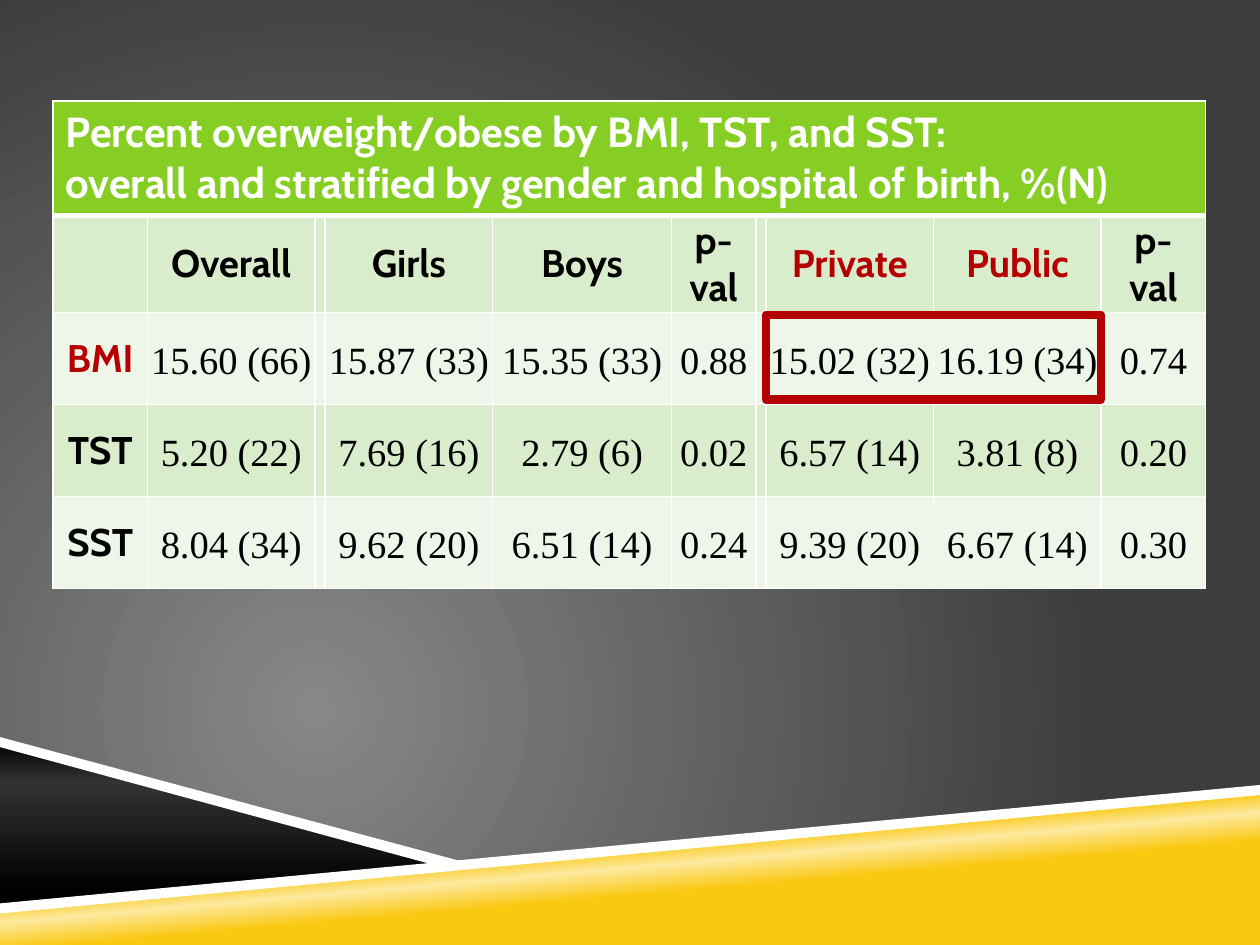
import dataclasses
import typing

import lxml.etree
import pptx
import pptx.dml.color
import pptx.enum.shapes
import pptx.enum.text
import pptx.oxml.ns
import pptx.util

SLIDE_WIDTH, SLIDE_HEIGHT = 10, 7.5
COLORS = {
    "glow": "878787", "charcoal": "3D3D3D", "gold": "FAC810",
    "cream": "FDE99F", "black": "000000", "graphite": "333333",
    "white": "FFFFFF", "green": "86CE24", "mint": "D9EDCD",
    "pale": "EDF6E8", "red": "B40000",
}
HEADING_FONT, VALUE_FONT = "Cabin", "Times New Roman"

TABLE_LEFT, TABLE_TOP = 0.42, 0.8
COLUMN_WIDTHS = [0.75, 1.33, 0.08, 1.33, 1.42, 0.67, 0.08, 1.33, 1.33, 0.83]
ROW_HEIGHTS = [0.84, 0.77, 0.73, 0.73, 0.73]
TITLE = (
    "Percent overweight/obese by BMI, TST, and SST:\n"
    "overall and stratified by gender and hospital of birth, %(N)"
)
RESULTS = [
    ["", "Overall", "", "Girls", "Boys", "p-\nval", "", "Private", "Public", "p-\nval"],
    ["BMI", "15.60 (66)", "", "15.87 (33)", "15.35 (33)", "0.88", "",
     "15.02 (32)", "16.19 (34)", "0.74"],
    ["TST", "5.20 (22)", "", "7.69 (16)", "2.79 (6)", "0.02", "",
     "6.57 (14)", "3.81 (8)", "0.20"],
    ["SST", "8.04 (34)", "", "9.62 (20)", "6.51 (14)", "0.24", "",
     "9.39 (20)", "6.67 (14)", "0.30"],
]
RED_HEADINGS = {"Private", "Public", "BMI"}


@dataclasses.dataclass(frozen=True)
class Band:
    points: list[tuple[float, float]]
    stops: list[tuple[int, str]]
    angle: int = 0


@dataclasses.dataclass(frozen=True)
class CellStyle:
    font: str
    size: int
    bold: bool
    color: str
    fill: str
    centered: bool = True
    line_spacing: typing.Optional[float] = None


BANDS = [
    Band([(0, 7.21), (10, 6.27), (10, 7.5), (0, 7.5)],
         [(39, "gold"), (50, "cream"), (58, "gold")], 265),
    Band([(0, 5.89), (3.59, 6.85), (0, 7.21)],
         [(0, "black"), (24, "graphite"), (90, "black")], 90),
    Band([(10, 6.23), (0, 7.17), (0, 7.25), (10, 6.31)], [(0, "white")]),
    Band([(0, 5.85), (0, 5.93), (3.5, 6.88), (3.75, 6.86)], [(0, "white")]),
]


def rgb(name: str) -> pptx.dml.color.RGBColor:
    return pptx.dml.color.RGBColor.from_string(COLORS[name])


def add_element(parent, tag: str, **attributes):
    return lxml.etree.SubElement(parent, pptx.oxml.ns.qn(tag), **attributes)


def set_gradient(owner, fill, stops: list[tuple[int, str]]):
    fill.gradient()
    gradient = next(owner.iter(pptx.oxml.ns.qn("a:gradFill")))
    for child in list(gradient):
        gradient.remove(child)
    stop_list = add_element(gradient, "a:gsLst")
    for position, color in stops:
        stop = add_element(stop_list, "a:gs", pos=str(position * 1000))
        add_element(stop, "a:srgbClr", val=COLORS[color])
    return gradient


def paint_background(slide) -> None:
    gradient = set_gradient(slide.element, slide.background.fill,
                            [(0, "glow"), (100, "charcoal")])
    circle = add_element(gradient, "a:path", path="circle")
    add_element(circle, "a:fillToRect", l="50000", t="100000", r="100000", b="50000")


def draw_band(slide, band: Band) -> None:
    corners = [(pptx.util.Inches(x), pptx.util.Inches(y)) for x, y in band.points]
    builder = slide.shapes.build_freeform(*corners[0])
    builder.add_line_segments(corners[1:], close=True)
    shape = builder.convert_to_shape()
    shape.shadow.inherit = False
    shape.line.fill.background()
    if len(band.stops) == 1:
        shape.fill.solid()
        shape.fill.fore_color.rgb = rgb(band.stops[0][1])
    else:
        gradient = set_gradient(shape.element, shape.fill, band.stops)
        add_element(gradient, "a:lin", ang=str(band.angle * 60000), scaled="0")


def set_borders(cell, top: int = 1, bottom: int = 1) -> None:
    properties = cell._tc.get_or_add_tcPr()
    for side, width in zip("LRTB", (1, 1, top, bottom)):
        line = add_element(properties, f"a:ln{side}", w=str(pptx.util.Pt(width)))
        solid = add_element(line, "a:solidFill")
        add_element(solid, "a:srgbClr", val=COLORS["white"])


def write_cell(cell, text: str, style: CellStyle) -> None:
    cell.fill.solid()
    cell.fill.fore_color.rgb = rgb(style.fill)
    if style.centered:
        cell.vertical_anchor = pptx.enum.text.MSO_ANCHOR.MIDDLE
        cell.margin_left = cell.margin_right = cell.margin_top = cell.margin_bottom = 0
    cell.text = text
    for paragraph in cell.text_frame.paragraphs:
        if style.centered:
            paragraph.alignment = pptx.enum.text.PP_ALIGN.CENTER
        if style.line_spacing:
            paragraph.line_spacing = style.line_spacing
        paragraph.font.name = style.font
        paragraph.font.size = pptx.util.Pt(style.size)
        paragraph.font.bold = style.bold
        paragraph.font.color.rgb = rgb(style.color)


def result_style(row: int, column: int, text: str) -> CellStyle:
    fill = "pale" if row % 2 else "mint"
    if row and column:
        return CellStyle(VALUE_FONT, 22, False, "black", fill, line_spacing=1.15)
    color = "red" if text in RED_HEADINGS else "black"
    return CellStyle(HEADING_FONT, 22, True, color, fill)


def draw_table(slide) -> None:
    table = slide.shapes.add_table(
        len(ROW_HEIGHTS), len(COLUMN_WIDTHS),
        pptx.util.Inches(TABLE_LEFT), pptx.util.Inches(TABLE_TOP),
        pptx.util.Inches(sum(COLUMN_WIDTHS)), pptx.util.Inches(sum(ROW_HEIGHTS)),
    ).table
    for column, width in zip(table.columns, COLUMN_WIDTHS):
        column.width = pptx.util.Inches(width)
    for row, height in zip(table.rows, ROW_HEIGHTS):
        row.height = pptx.util.Inches(height)
    for cell in table.rows[0].cells:
        set_borders(cell, bottom=3)
    title = table.cell(0, 0)
    title.merge(table.cell(0, len(COLUMN_WIDTHS) - 1))
    write_cell(title, TITLE,
               CellStyle(HEADING_FONT, 24, True, "white", "green", centered=False))
    for row, entries in enumerate(RESULTS):
        for column, text in enumerate(entries):
            cell = table.cell(row + 1, column)
            set_borders(cell, top=1 if row else 3)
            write_cell(cell, text, result_style(row, column, text))


def draw_highlight(slide, row: int, first: int, last: int) -> None:
    inset = 0.09
    highlight = slide.shapes.add_shape(
        pptx.enum.shapes.MSO_SHAPE.RECTANGLE,
        pptx.util.Inches(TABLE_LEFT + sum(COLUMN_WIDTHS[:first])),
        pptx.util.Inches(TABLE_TOP + sum(ROW_HEIGHTS[:row]) + inset),
        pptx.util.Inches(sum(COLUMN_WIDTHS[first:last + 1])),
        pptx.util.Inches(ROW_HEIGHTS[row] - 0.06),
    )
    highlight.shadow.inherit = False
    highlight.fill.background()
    highlight.line.color.rgb = rgb("red")
    highlight.line.width = pptx.util.Pt(5)


def main() -> None:
    presentation = pptx.Presentation()
    presentation.slide_width = pptx.util.Inches(SLIDE_WIDTH)
    presentation.slide_height = pptx.util.Inches(SLIDE_HEIGHT)
    slide = presentation.slides.add_slide(presentation.slide_layouts[6])
    paint_background(slide)
    for band in BANDS:
        draw_band(slide, band)
    draw_table(slide)
    draw_highlight(slide, row=2, first=7, last=8)
    presentation.save("out.pptx")


if __name__ == "__main__":
    main()
